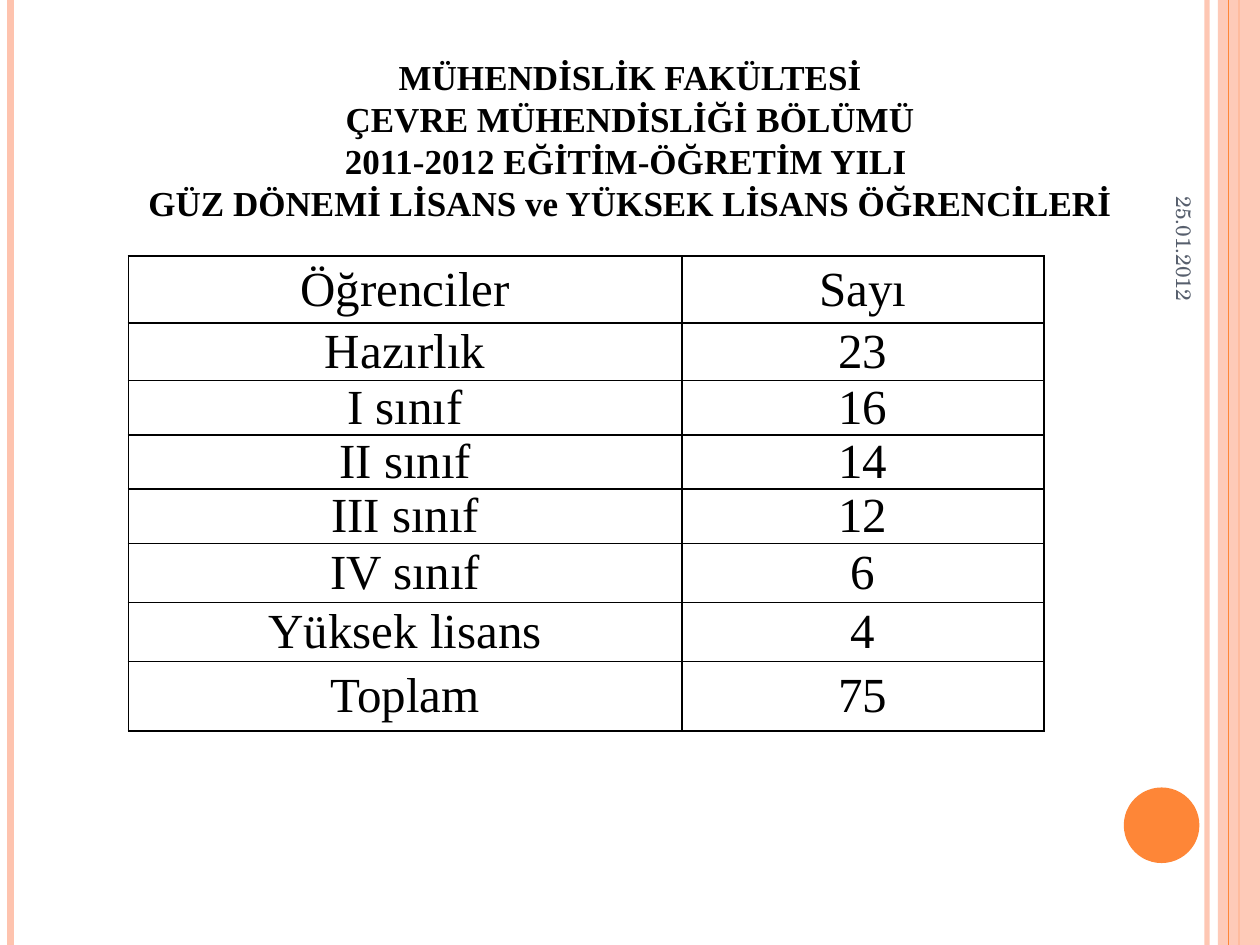
from lxml.etree import SubElement
from pptx import Presentation
from pptx.dml.color import RGBColor
from pptx.enum.shapes import MSO_CONNECTOR, MSO_SHAPE
from pptx.enum.text import MSO_ANCHOR, PP_ALIGN
from pptx.oxml.ns import qn
from pptx.util import Pt

BLACK = RGBColor(0x00, 0x00, 0x00)
ORANGE = RGBColor(0xFE, 0x86, 0x37)
PEACH = RGBColor(0xFE, 0xC3, 0xAE)
SLATE = RGBColor(0x57, 0x5F, 0x6D)
SERIF = "Times New Roman"
SCHOLA = "TeX Gyre Schola"
WIDTH, HEIGHT = 720, 540

HEADING = [
    "MÜHENDİSLİK FAKÜLTESİ",
    "ÇEVRE MÜHENDİSLİĞİ BÖLÜMÜ",
    "2011-2012 EĞİTİM-ÖĞRETİM YILI ",
    "GÜZ DÖNEMİ LİSANS ve YÜKSEK LİSANS ÖĞRENCİLERİ",
]
STUDENTS = [
    ("Öğrenciler", "Sayı", 38.2),
    ("Hazırlık", "23", 33),
    ("I sınıf", "16", 30.2),
    ("II sınıf", "14", 28),
    ("III sınıf", "12", 28),
    ("IV sınıf", "6", 33.8),
    ("Yüksek lisans", "4", 33.8),
    ("Toplam", "75", 39.6),
]
COLUMN_WIDTHS = (316.4, 206.8)


def set_opacity(properties, percent):
    color = next(properties.iter(qn("a:srgbClr")))
    SubElement(color, qn("a:alpha"), val=str(percent * 1000))


def add_stripe(slide, x, color, weight, opacity=100):
    stripe = slide.shapes.add_connector(
        MSO_CONNECTOR.STRAIGHT, Pt(x), Pt(0), Pt(x), Pt(HEIGHT))
    stripe.line.color.rgb = color
    stripe.line.width = Pt(weight)
    properties = stripe._element.spPr
    SubElement(properties, qn("a:effectLst"))
    if opacity < 100:
        set_opacity(properties, opacity)


def add_block(slide, preset, left, top, width, height, color, opacity=100):
    block = slide.shapes.add_shape(
        preset, Pt(left), Pt(top), Pt(width), Pt(height))
    block.shadow.inherit = False
    block.fill.solid()
    block.fill.fore_color.rgb = color
    block.line.fill.background()
    if opacity < 100:
        set_opacity(block._element.spPr, opacity)


def add_run(paragraph, text, size, font, color, bold=False):
    run = paragraph.add_run()
    run.text = text
    run.font.size = Pt(size)
    run.font.name = font
    run.font.color.rgb = color
    run.font.bold = bold


def add_text_box(slide, left, top, width, height, alignment):
    box = slide.shapes.add_textbox(Pt(left), Pt(top), Pt(width), Pt(height))
    box.text_frame.word_wrap = True
    paragraph = box.text_frame.paragraphs[0]
    paragraph.alignment = alignment
    return box, paragraph


def add_heading(slide):
    _, paragraph = add_text_box(slide, 45, 28, 630, 104.4, PP_ALIGN.CENTER)
    paragraph.line_spacing = Pt(24)
    for index, line in enumerate(HEADING):
        if index:
            paragraph.add_line_break()
        add_run(paragraph, line, 20, SERIF, BLACK, bold=True)


def add_date(slide):
    date, paragraph = add_text_box(slide, 597.6, 85, 158.4, 30, PP_ALIGN.RIGHT)
    date.rotation = 90
    date.text_frame.vertical_anchor = MSO_ANCHOR.MIDDLE
    add_run(paragraph, "25.01.2012", 12, SCHOLA, SLATE)


def add_borders(cell):
    properties = cell._tc.get_or_add_tcPr()
    for index, side in enumerate(("lnL", "lnR", "lnT", "lnB")):
        border = properties.makeelement(qn(f"a:{side}"), {"w": str(Pt(1))})
        fill = SubElement(border, qn("a:solidFill"))
        SubElement(fill, qn("a:srgbClr"), val=str(BLACK))
        properties.insert(index, border)


def fill_cell(cell, text):
    cell.fill.background()
    cell.vertical_anchor = MSO_ANCHOR.MIDDLE
    cell.margin_left = cell.margin_right = Pt(5)
    cell.margin_top = cell.margin_bottom = Pt(0)
    paragraph = cell.text_frame.paragraphs[0]
    paragraph.alignment = PP_ALIGN.CENTER
    add_run(paragraph, text, 28, SERIF, BLACK)
    add_borders(cell)


def add_student_table(slide):
    total_height = sum(height for _, _, height in STUDENTS)
    table = slide.shapes.add_table(
        len(STUDENTS), len(COLUMN_WIDTHS), Pt(73.3), Pt(146.3),
        Pt(sum(COLUMN_WIDTHS)), Pt(total_height)).table
    table.first_row = False
    table.horz_banding = False
    for column, width in zip(table.columns, COLUMN_WIDTHS):
        column.width = Pt(width)
    for row, (group, count, height) in zip(table.rows, STUDENTS):
        row.height = Pt(height)
        for cell, text in zip(row.cells, (group, count)):
            fill_cell(cell, text)


def add_decoration(slide):
    add_stripe(slide, 689.8, PEACH, 3, opacity=93)
    add_stripe(slide, 6, PEACH, 4.5)
    add_stripe(slide, 708, ORANGE, 1.5)
    add_block(slide, MSO_SHAPE.RECTANGLE, 696, 0, WIDTH - 696, HEIGHT, PEACH, opacity=87)
    add_stripe(slide, 702, ORANGE, 0.75)
    add_block(slide, MSO_SHAPE.OVAL, 642.2, 450, 43.2, 43.2, ORANGE)


def main():
    presentation = Presentation()
    presentation.slide_width = Pt(WIDTH)
    presentation.slide_height = Pt(HEIGHT)
    slide = presentation.slides.add_slide(presentation.slide_layouts[6])
    add_decoration(slide)
    add_student_table(slide)
    add_heading(slide)
    add_date(slide)
    presentation.save("out.pptx")


if __name__ == "__main__":
    main()
